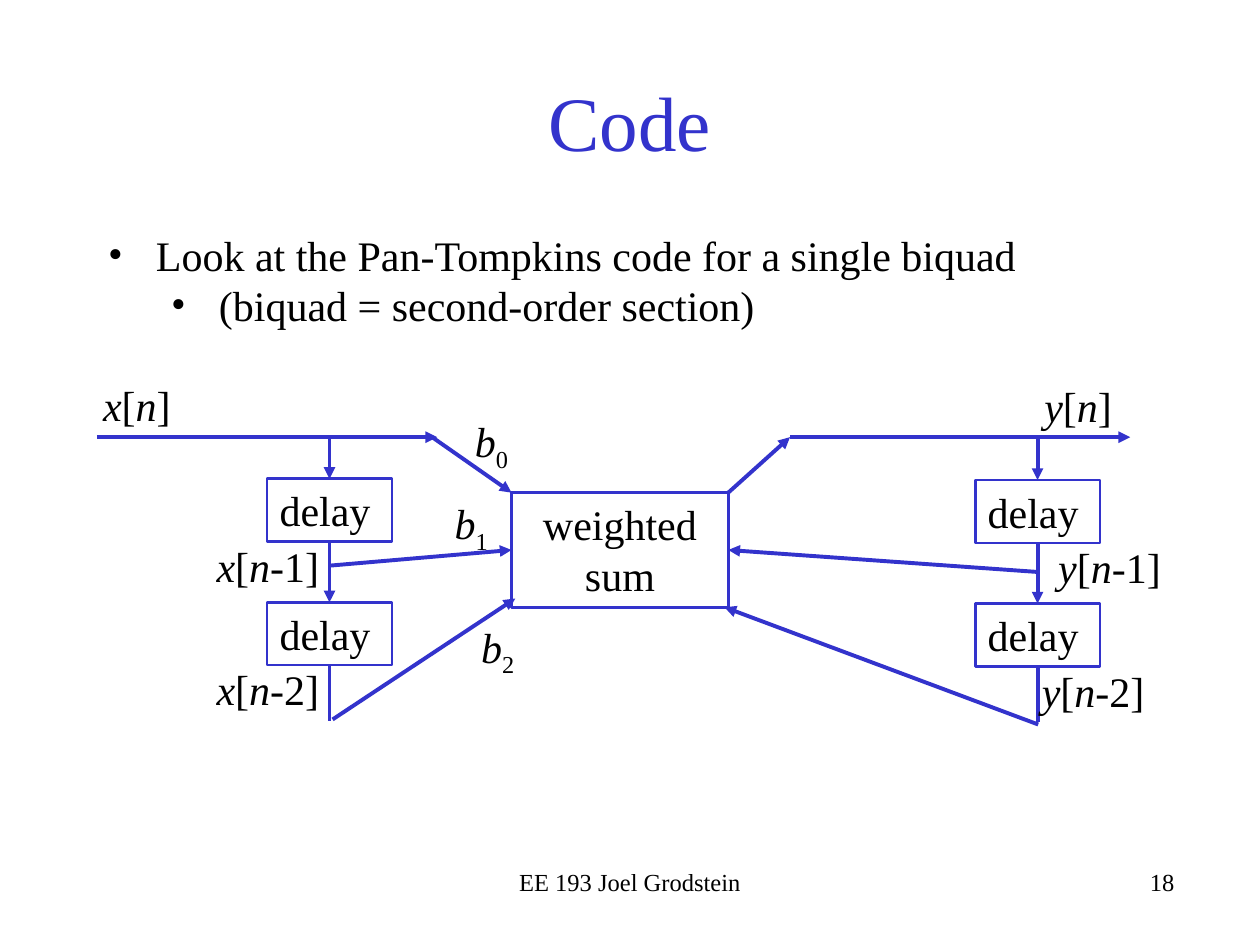
from dataclasses import dataclass

from lxml import etree
from pptx import Presentation
from pptx.dml.color import RGBColor
from pptx.enum.shapes import MSO_CONNECTOR, MSO_SHAPE
from pptx.enum.text import MSO_ANCHOR, PP_ALIGN
from pptx.oxml.ns import qn
from pptx.util import Inches, Pt

LEFT, CENTER, RIGHT = PP_ALIGN.LEFT, PP_ALIGN.CENTER, PP_ALIGN.RIGHT
TOP, MIDDLE = MSO_ANCHOR.TOP, MSO_ANCHOR.MIDDLE
STRAIGHT, RECTANGLE = MSO_CONNECTOR.STRAIGHT, MSO_SHAPE.RECTANGLE


@dataclass(frozen=True)
class Theme:
    font: str = "Times New Roman"
    ink: RGBColor = RGBColor(0, 0, 0)
    accent: RGBColor = RGBColor(0x33, 0x33, 0xCC)
    title: int = 44
    body: int = 24
    footer: int = 14
    border: float = 1.5
    wire: float = 2.25


THEME = Theme()

# Content
TITLE = "Code"
BULLETS = [
    (0, "Look at the Pan-Tompkins code for a single biquad"),
    (1, "(biquad = second-order section)"),
]
FOOTER, PAGE = "EE 193 Joel Grodstein", "18"
SUM_TEXT = "weighted sum"
# signal, left of its delay boxes, drop below the input side,
# label places (left, width) for n, n-1, n-2
CHANNELS = [
    ("x", 2.12, 0, [(0.72, 0.8), (1.62, 1.08), (1.62, 1.08)]),
    ("y", 7.74, 0.01, [(8.19, 0.8), (8.3, 1.08), (8.17, 1.08)]),
]
COEFFICIENTS = [("0", 3.67, 3.25), ("1", 3.51, 3.9), ("2", 3.72, 4.88)]

# Layout in inches
SLIDE_W, SLIDE_H = 10, 7.5
ROW_H = 0.5
DELAY_W, DELAY_TOP, DELAY_PITCH = 0.99, 3.8, 0.98
LABEL_TOPS = [2.96, 4.24, 5.22]
RAIL_Y, RAIL_W = 3.47, 2.7
RAIL_STARTS = [0.77, 6.27]
SUM_X, SUM_Y, SUM_W, SUM_H = 4.06, 3.91, 1.72, 0.91
SUM_RIGHT, SUM_BOTTOM, SUM_MID = SUM_X + SUM_W, SUM_Y + SUM_H, SUM_Y + SUM_H / 2
FOOTER_Y, FOOTER_W = 6.83, 3.17
BULLET_INDENT, LEVEL_STEP = 0.38, 0.5

# Wires between the channels and the sum
FEEDS = [
    ((3.43, RAIL_Y), (SUM_X, SUM_Y)),
    ((2.61, 4.49), (SUM_X, SUM_MID)),
    ((2.64, 5.71), (4.09, 4.75)),
    ((SUM_RIGHT, SUM_Y), (RAIL_STARTS[1], RAIL_Y)),
    ((8.24, 4.54), (SUM_RIGHT, SUM_MID)),
    ((8.24, 5.75), (5.75, SUM_BOTTOM)),
]

prs = Presentation()
prs.slide_width, prs.slide_height = Inches(SLIDE_W), Inches(SLIDE_H)
slide = prs.slides.add_slide(prs.slide_layouts[6])


def add_run(paragraph, text, size=THEME.body, color=THEME.ink, italic=False, subscript=False):
    run = paragraph.add_run()
    run.text = text
    font = run.font
    font.name, font.size, font.italic = THEME.font, Pt(size), italic
    font.color.rgb = color
    if subscript:
        run._r.get_or_add_rPr().set("baseline", "-25000")


def prepare(shape, align=LEFT, anchor=TOP, wrap=True):
    """Set up the text frame and return its first paragraph."""
    frame = shape.text_frame
    frame.word_wrap, frame.vertical_anchor = wrap, anchor
    paragraph = frame.paragraphs[0]
    paragraph.alignment = align
    return paragraph


def add_text(x, y, w, h, **options):
    box = slide.shapes.add_textbox(Inches(x), Inches(y), Inches(w), Inches(h))
    return prepare(box, **options)


def add_block(x, y, w, h, text, align=LEFT):
    block = slide.shapes.add_shape(RECTANGLE, Inches(x), Inches(y), Inches(w), Inches(h))
    block.shadow.inherit = False
    block.fill.background()
    block.line.color.rgb, block.line.width = THEME.accent, Pt(THEME.border)
    add_run(prepare(block, align), text)


def add_wire(start, end, arrow=True):
    wire = slide.shapes.add_connector(STRAIGHT, *map(Inches, start + end))
    wire.line.color.rgb, wire.line.width = THEME.accent, Pt(THEME.wire)
    if arrow:
        etree.SubElement(wire.line._get_or_add_ln(), qn("a:tailEnd"), type="triangle")
    etree.SubElement(wire._element.spPr, qn("a:effectLst"))


def add_bullet(paragraph, level, text):
    paragraph.level = level
    props = paragraph._p.get_or_add_pPr()
    props.set("marL", str(Inches(BULLET_INDENT + level * LEVEL_STEP)))
    props.set("indent", str(-Inches(BULLET_INDENT)))
    etree.SubElement(props, qn("a:buFont"), typeface=THEME.font)
    etree.SubElement(props, qn("a:buChar"), char="•")
    add_run(paragraph, text)


def add_channel(signal, box_x, drop, places):
    """Draw one delay line: labels, two delay boxes and the wires between them."""
    tap_x = box_x + DELAY_W / 2
    first = DELAY_TOP + drop
    second = first + DELAY_PITCH
    bottom = second + ROW_H
    for y in (first, second):
        add_block(box_x, y, DELAY_W, ROW_H, "delay")
    add_wire((tap_x, RAIL_Y), (tap_x, first))
    add_wire((tap_x, first + ROW_H), (tap_x, second))
    add_wire((tap_x, bottom), (tap_x, bottom + 0.44), arrow=False)
    for lag, ((x, w), y) in enumerate(zip(places, LABEL_TOPS)):
        label = add_text(x, y + drop, w, ROW_H, wrap=False)
        add_run(label, signal, italic=True)
        add_run(label, "[")
        add_run(label, "n", italic=True)
        add_run(label, f"-{lag}]" if lag else "]")


add_run(add_text(0.75, 0.33, 8.5, 1.25, align=CENTER, anchor=MIDDLE),
        TITLE, THEME.title, THEME.accent)

bullet = add_text(0.76, 1.77, 7.5, 0.91)
for index, (level, text) in enumerate(BULLETS):
    if index:
        bullet = slide.shapes[-1].text_frame.add_paragraph()
    add_bullet(bullet, level, text)

for channel in CHANNELS:
    add_channel(*channel)
for x in RAIL_STARTS:
    add_wire((x, RAIL_Y), (x + RAIL_W, RAIL_Y))

add_block(SUM_X, SUM_Y, SUM_W, SUM_H, SUM_TEXT, CENTER)
for start, end in FEEDS:
    add_wire(start, end)
for index, x, y in COEFFICIENTS:
    coefficient = add_text(x, y, 0.61, ROW_H, wrap=False)
    add_run(coefficient, "b", italic=True)
    add_run(coefficient, index, subscript=True)

for x, align, text in [((SLIDE_W - FOOTER_W) / 2, CENTER, FOOTER), (6.25, RIGHT, PAGE)]:
    add_run(add_text(x, FOOTER_Y, FOOTER_W, ROW_H, align=align), text, THEME.footer)

prs.save("out.pptx")
